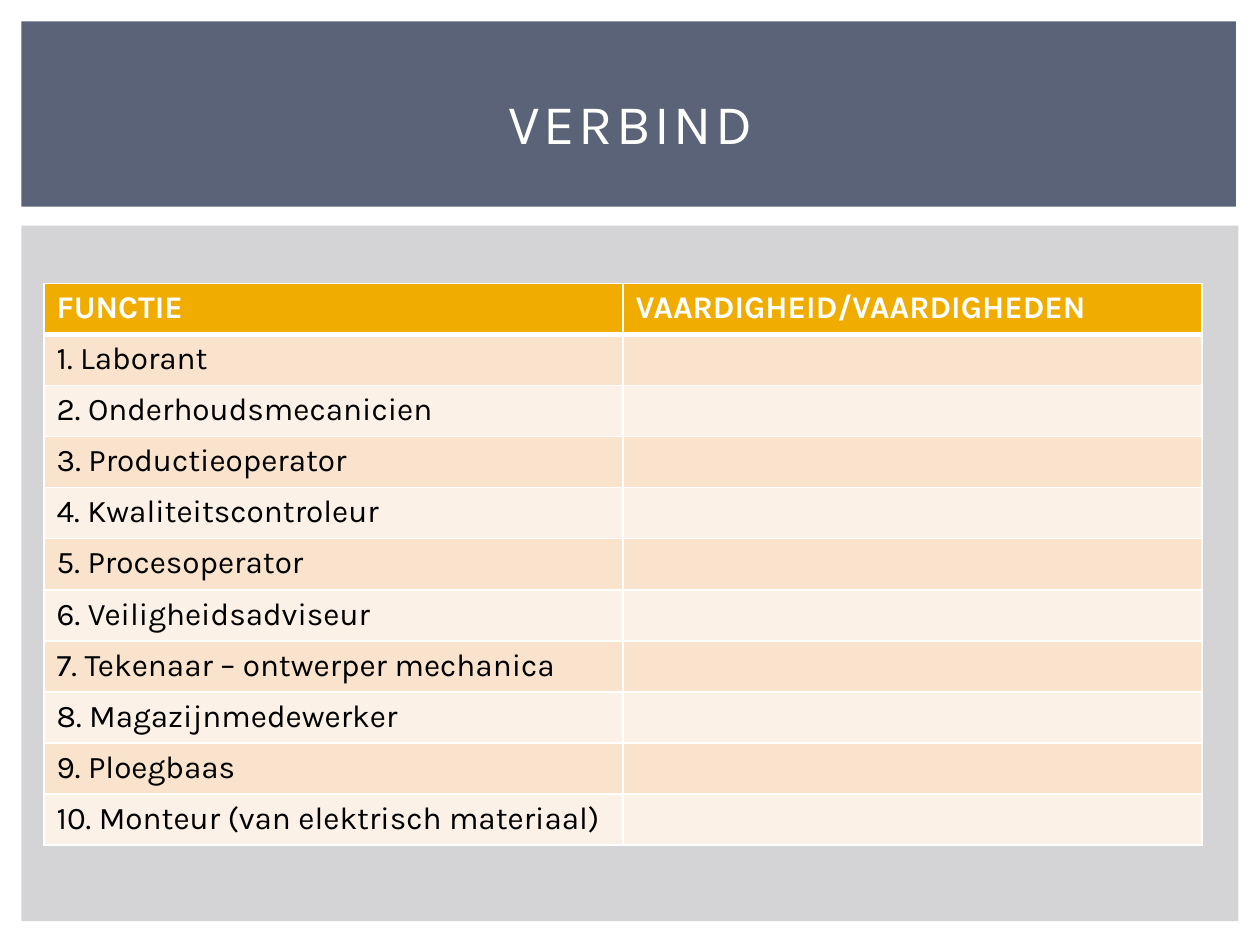
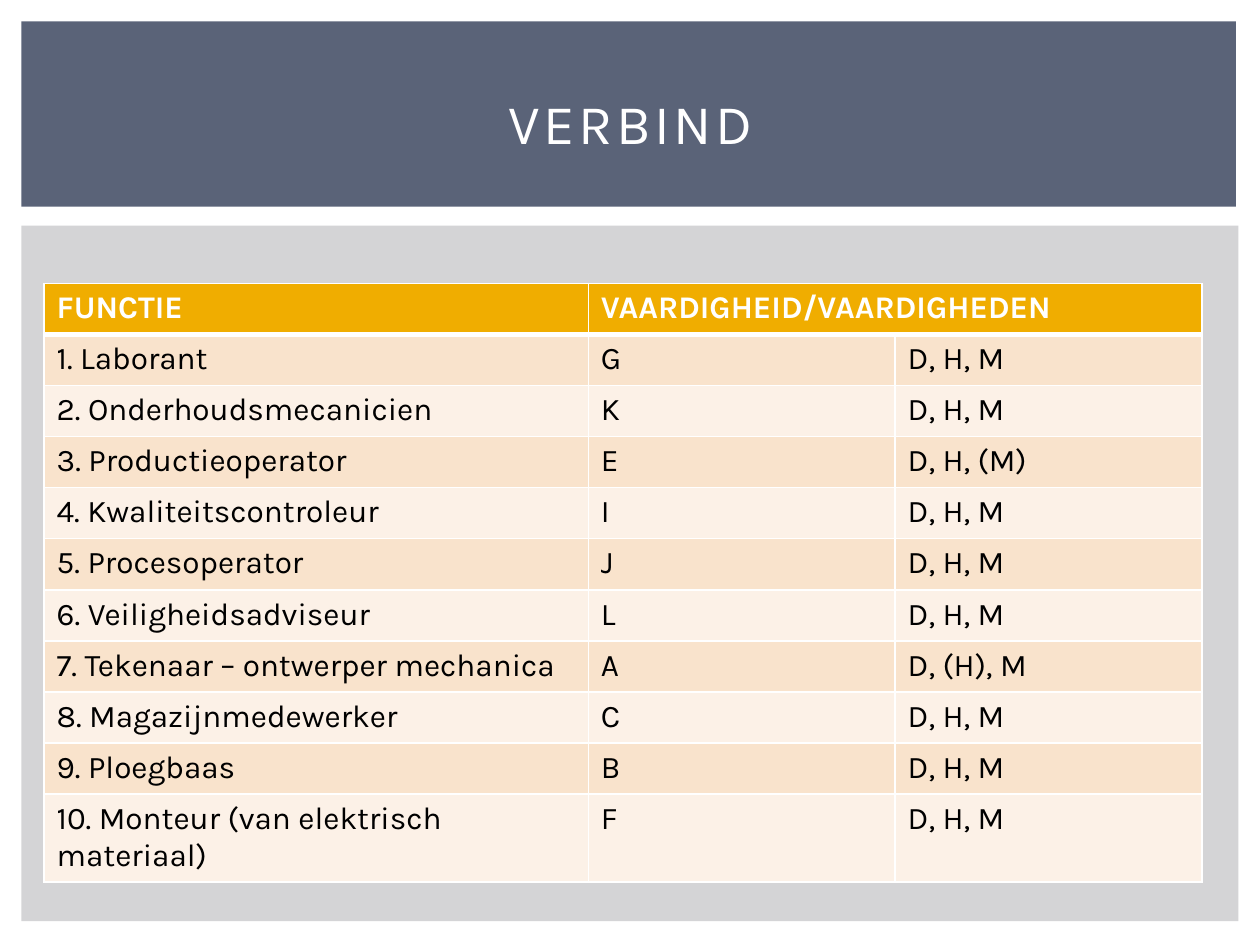
from dataclasses import dataclass

from lxml import etree
from pptx import Presentation
from pptx.dml.color import RGBColor
from pptx.enum.shapes import MSO_SHAPE
from pptx.enum.text import MSO_ANCHOR, PP_ALIGN
from pptx.oxml.ns import qn
from pptx.util import Inches, Pt

RECT = MSO_SHAPE.RECTANGLE
MIDDLE = MSO_ANCHOR.MIDDLE
CENTER = PP_ALIGN.CENTER

COLS, ROWS = 100, 75
BLANK = 6


@dataclass(frozen=True)
class Theme:
    """Colours, font and type sizes of the deck."""

    font: str = "Karla"
    white: str = "FFFFFF"
    ink: str = "000000"
    panel: str = "D4D4D6"
    band: str = "5A6378"
    head: str = "F0AD00"
    odd: str = "F9E3CC"
    even: str = "FCF1E7"
    title: int = 32
    body: int = 18
    track: int = 200
    thin: int = 1
    thick: int = 3


class Deck:
    """Holds the style and the current slide, and draws on a grid."""

    def __init__(self, theme):
        """Start an empty deck of 10 by 7.5 inches."""
        self.theme = theme
        self.file = Presentation()
        self.file.slide_width = Inches(10)
        self.file.slide_height = Inches(7.5)
        self.slide = None

    def place(self, left, top, width, height):
        """Turn grid columns and rows into lengths."""
        col = self.file.slide_width / COLS
        row = self.file.slide_height / ROWS
        return [round(n * unit) for n, unit in
                ((left, col), (top, row), (width, col), (height, row))]

    def page(self, title):
        """Add a slide with its panel, band and title."""
        layout = self.file.slide_layouts[BLANK]
        self.slide = self.file.slides.add_slide(layout)
        self.block((1.7, 17.9, 96.6, 55.2), self.theme.panel)
        self.block((1.7, 1.7, 96.4, 14.7), self.theme.band)
        self.title(title)

    def block(self, area, fill):
        """Draw a plain filled rectangle."""
        shape = self.slide.shapes.add_shape(RECT, *self.place(*area))
        shape.shadow.inherit = False
        shape.fill.solid()
        shape.fill.fore_color.rgb = RGBColor.from_string(fill)
        shape.line.fill.background()

    def style(self, frame, size, color, bold=False):
        """Format every run of a text frame."""
        for para in frame.paragraphs:
            for run in para.runs:
                run.font.name = self.theme.font
                run.font.size = Pt(size)
                run.font.bold = bold
                run.font.color.rgb = RGBColor.from_string(color)

    def title(self, text):
        """Write the spaced title in the middle of the band."""
        area = self.place(4.2, 3.9, 91.7, 11.5)
        frame = self.slide.shapes.add_textbox(*area).text_frame
        frame.word_wrap = True
        frame.vertical_anchor = MIDDLE
        frame.text = text
        para = frame.paragraphs[0]
        para.alignment = CENTER
        self.style(frame, self.theme.title, self.theme.white)
        for run in para.runs:
            run.font._element.set("spc", str(self.theme.track))

    def edge(self, cell, side, width):
        """Draw one white border of a cell."""
        props = cell._tc.get_or_add_tcPr()
        line = etree.SubElement(props, qn(f"a:ln{side}"), w=str(Pt(width)))
        fill = etree.SubElement(line, qn("a:solidFill"))
        etree.SubElement(fill, qn("a:srgbClr"), val=self.theme.white)

    def cell(self, cell, text, row):
        """Fill, frame and write one cell by its row."""
        theme = self.theme
        head = row == 0
        for side in "LRTB":
            heavy = (row, side) in ((0, "B"), (1, "T"))
            self.edge(cell, side, theme.thick if heavy else theme.thin)
        fill = theme.head if head else theme.odd if row % 2 else theme.even
        cell.fill.solid()
        cell.fill.fore_color.rgb = RGBColor.from_string(fill)
        if text:
            cell.text_frame.text = text
            color = theme.white if head else theme.ink
            self.style(cell.text_frame, theme.body, color, head)

    def table(self, area, shares, rows):
        """Draw a banded table whose last heading spans what is left."""
        left, top, width, height = self.place(*area)
        grid = self.slide.shapes.add_table(
            len(rows), len(shares), left, top, width, height).table
        grid.horz_banding = False
        for col, share in zip(grid.columns, shares):
            col.width = round(width * share)
        for line in grid.rows:
            line.height = round(height / len(rows))
        for r, texts in enumerate(rows):
            for c in range(len(shares)):
                text = texts[c] if c < len(texts) else ""
                self.cell(grid.cell(r, c), text, r)
        if len(shares) > len(rows[0]):
            first = grid.cell(0, len(rows[0]) - 1)
            first.merge(grid.cell(0, len(shares) - 1))


TITLE = "VERBIND"
AREA = (3.5, 22.5, 91.9, 44.6)
HEADS = ("FUNCTIE", "VAARDIGHEID/VAARDIGHEDEN")
JOBS = (
    "Laborant",
    "Onderhoudsmecanicien",
    "Productieoperator",
    "Kwaliteitscontroleur",
    "Procesoperator",
    "Veiligheidsadviseur",
    "Tekenaar – ontwerper mechanica",
    "Magazijnmedewerker",
    "Ploegbaas",
    "Monteur (van elektrisch materiaal)",
)
KEYS = "GKEIJLACBF"
USUAL = "D, H, M"
OTHER = {"E": "D, H, (M)", "A": "D, (H), M"}


def main():
    """Build the exercise and its answers."""
    deck = Deck(Theme())
    names = [f"{n}. {job}" for n, job in enumerate(JOBS, 1)]
    tasks = [(name,) for name in names]
    keyed = [(name, key, OTHER.get(key, USUAL))
             for name, key in zip(names, KEYS)]
    for shares, rows in (((0.5, 0.5), tasks),
                         ((0.47, 0.265, 0.265), keyed)):
        deck.page(TITLE)
        deck.table(AREA, shares, [HEADS, *rows])
    deck.file.save("out.pptx")


if __name__ == "__main__":
    main()
